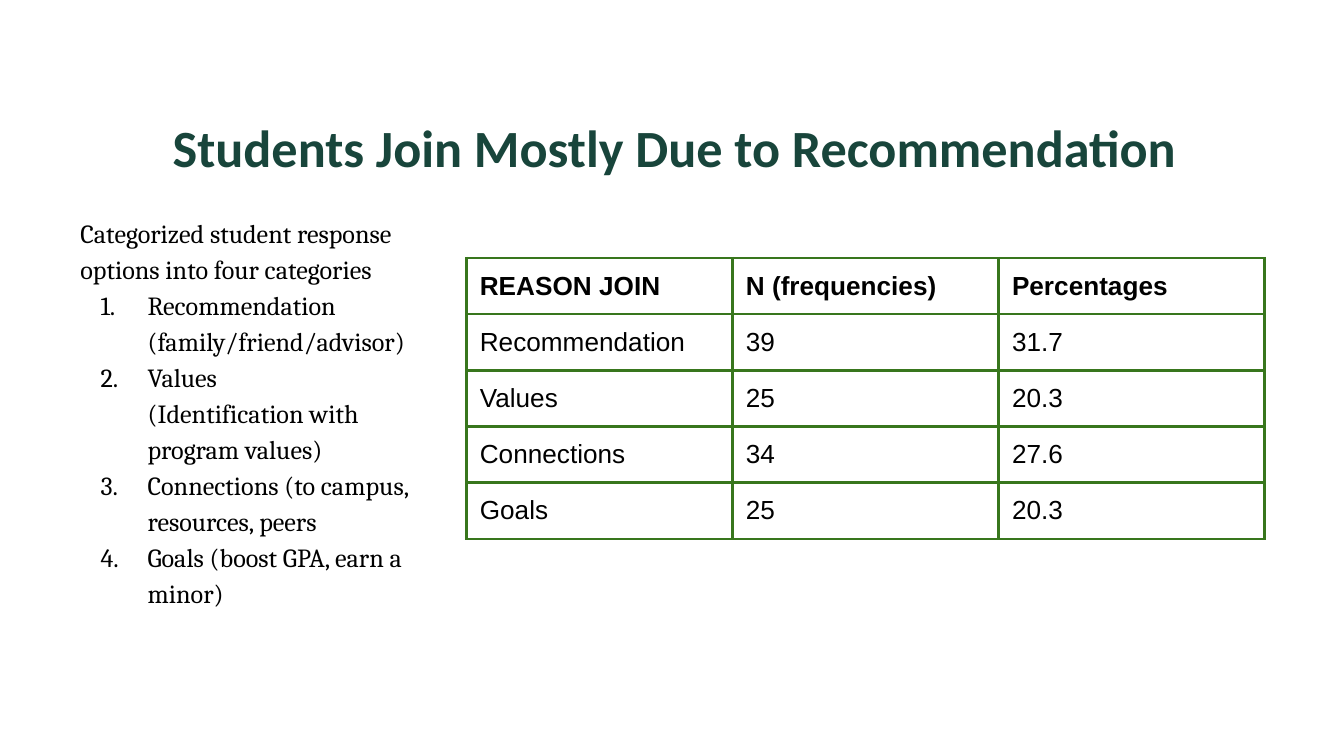
from lxml.etree import SubElement
from pptx import Presentation
from pptx.dml.color import RGBColor
from pptx.enum.text import PP_ALIGN
from pptx.oxml.ns import qn
from pptx.util import Inches, Pt

BLACK = RGBColor(0x00, 0x00, 0x00)
WHITE = RGBColor(0xFF, 0xFF, 0xFF)
DARK_GREEN = RGBColor(0x18, 0x45, 0x3B)
BORDER_GREEN = RGBColor(0x38, 0x76, 0x1D)
INSET = Inches(0.1)

INTRO = "Categorized student response options into four categories"
# Each entry: text, whether it carries a number
CATEGORIES = [
    ("Recommendation (family/friend/advisor)", True),
    ("Values", True),
    ("(Identification with program values)", False),
    ("Connections (to campus, resources, peers", True),
    ("Goals (boost GPA, earn a minor)", True),
]
REASONS = [
    ("REASON JOIN", "N (frequencies)", "Percentages"),
    ("Recommendation", "39", "31.7"),
    ("Values", "25", "20.3"),
    ("Connections", "34", "27.6"),
    ("Goals", "25", "20.3"),
]


def write(paragraph, text, font="Arial", size=14, color=BLACK, bold=False,
          align=PP_ALIGN.LEFT, line_spacing=None):
    paragraph.alignment = align
    if line_spacing:
        paragraph.line_spacing = line_spacing
    run = paragraph.add_run()
    run.text = text
    run.font.name = font
    run.font.size = Pt(size)
    run.font.bold = bold
    run.font.color.rgb = color


def add_text_frame(slide, left, top, width, height):
    box = slide.shapes.add_textbox(
        Inches(left), Inches(top), Inches(width), Inches(height))
    frame = box.text_frame
    frame.word_wrap = True
    frame.margin_left = frame.margin_right = INSET
    frame.margin_top = frame.margin_bottom = INSET
    return frame


def set_list_indent(paragraph, numbered):
    """Indent a list paragraph, with a hanging number when it has one."""
    properties = paragraph._p.get_or_add_pPr()
    properties.set("marL", str(Inches(0.5)))
    properties.set("indent", str(Inches(-0.35) if numbered else 0))
    if numbered:
        bullet_color = SubElement(properties, qn("a:buClr"))
        SubElement(bullet_color, qn("a:srgbClr"), val=str(BLACK))
        SubElement(properties, qn("a:buFont"), typeface="Cambria")
        SubElement(properties, qn("a:buAutoNum"), type="arabicPeriod")
    else:
        SubElement(properties, qn("a:buNone"))


def set_borders(cell, color, width):
    properties = cell._tc.get_or_add_tcPr()
    for side in ("lnL", "lnR", "lnT", "lnB"):
        line = SubElement(properties, qn(f"a:{side}"), w=str(Pt(width)))
        fill = SubElement(line, qn("a:solidFill"))
        SubElement(fill, qn("a:srgbClr"), val=str(color))
        SubElement(line, qn("a:prstDash"), val="solid")


def add_title(slide, left, top, width, height):
    frame = add_text_frame(slide, left, top, width, height)
    write(frame.paragraphs[0], "Students Join Mostly Due to Recommendation",
          font="Calibri", size=28, color=DARK_GREEN, bold=True,
          align=PP_ALIGN.CENTER)


def add_category_list(slide, left, top, width, height):
    frame = add_text_frame(slide, left, top, width, height)
    write(frame.paragraphs[0], INTRO, font="Cambria", line_spacing=1.15)
    for text, numbered in CATEGORIES:
        paragraph = frame.add_paragraph()
        set_list_indent(paragraph, numbered)
        write(paragraph, text, font="Cambria", line_spacing=1.15)


def add_reason_table(slide, left, top, width, height):
    table = slide.shapes.add_table(
        len(REASONS), len(REASONS[0]), Inches(left), Inches(top),
        Inches(width), Inches(height)).table
    table.first_row = False
    table.horz_banding = False
    for row_index, values in enumerate(REASONS):
        for column_index, value in enumerate(values):
            cell = table.cell(row_index, column_index)
            cell.margin_left = cell.margin_right = cell.margin_top = INSET
            cell.margin_bottom = Inches(0.08)
            set_borders(cell, BORDER_GREEN, 1.5)
            cell.fill.background()
            write(cell.text_frame.paragraphs[0], value, bold=row_index == 0)


def main():
    presentation = Presentation()
    presentation.slide_width = Inches(10)
    presentation.slide_height = Inches(10) * 9 // 16
    slide = presentation.slides.add_slide(presentation.slide_layouts[6])
    slide.background.fill.solid()
    slide.background.fill.fore_color.rgb = WHITE
    add_title(slide, 0.23, 0.76, 9.57, 0.72)
    add_category_list(slide, 0.5, 1.48, 2.73, 3.7)
    add_reason_table(slide, 3.47, 1.92, 5.94, 2.09)
    presentation.save("out.pptx")


if __name__ == "__main__":
    main()
